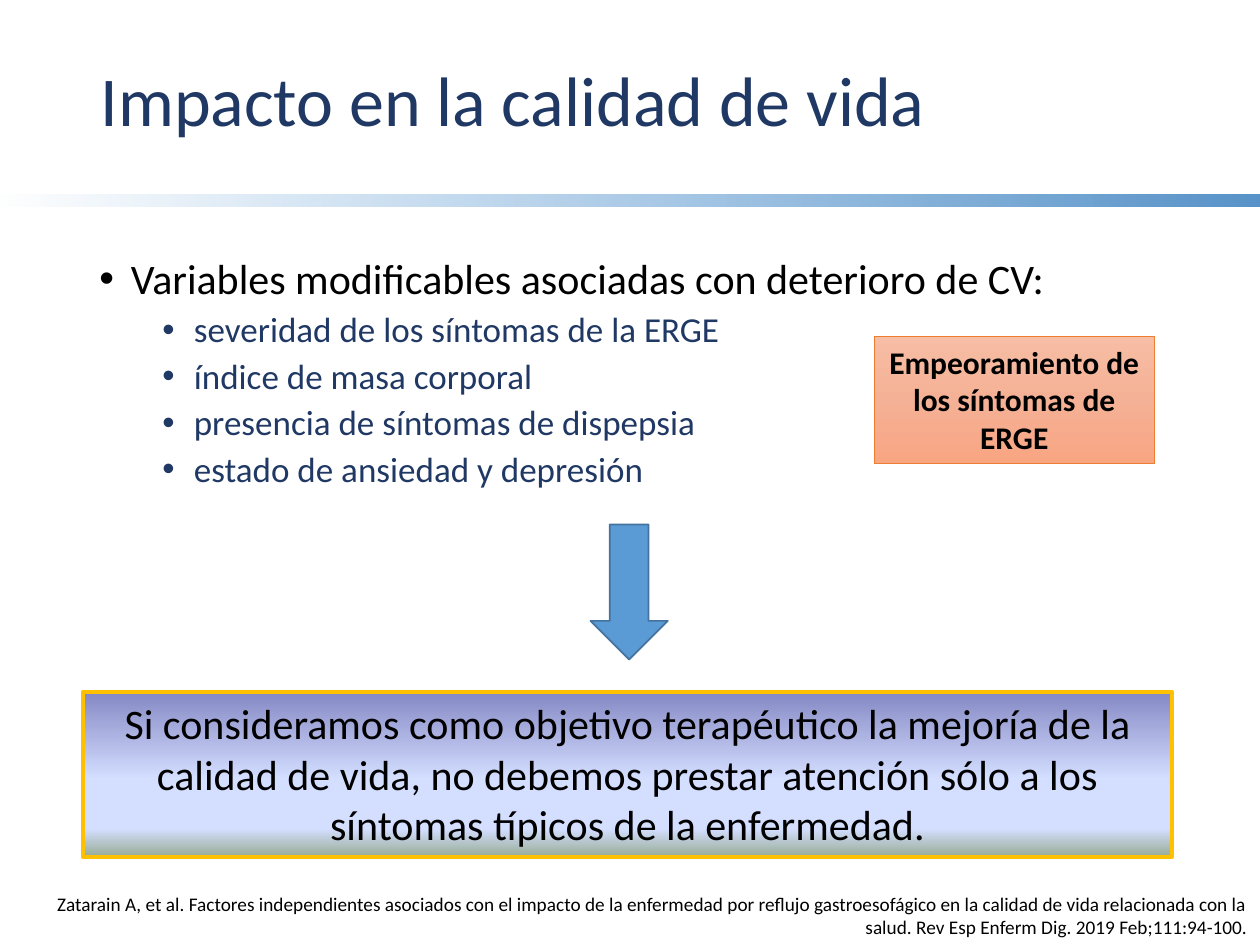
import pptx
import pptx.util
import pptx.dml.color
import pptx.enum.shapes
import pptx.enum.text
import pptx.oxml.ns
from lxml import etree

Pt = pptx.util.Pt
qn = pptx.oxml.ns.qn
KIND = pptx.enum.shapes.MSO_SHAPE
ALIGN = pptx.enum.text.PP_ALIGN
ANCHOR = pptx.enum.text.MSO_ANCHOR

HUES = {
    "navy": "203864", "black": "000000", "blue": "5B9BD5", "steel": "5591C8",
    "edge": "43739E", "orange": "ED7D31", "gold": "FFC000",
    "peach": "F7BDA5", "salmon": "F5B196", "coral": "F8A582",
    "violet": "8488C4", "pale": "D4DEFF", "sage": "96AB94",
}

FACTORS = [
    "severidad de los síntomas de la ERGE",
    "índice de masa corporal",
    "presencia de síntomas de dispepsia",
    "estado de ansiedad y depresión",
]


def rgb(name):
    return pptx.dml.color.RGBColor.from_string(HUES[name])


def style(par, size, hue="black", bold=False, **form):
    """Set the font and the paragraph format."""
    for key, val in {"name": "Calibri", "size": Pt(size), "bold": bold}.items():
        setattr(par.font, key, val)
    par.font.color.rgb = rgb(hue)
    for key, val in form.items():
        setattr(par, key, val)


def add_bullet(par, left, hang):
    """Give the paragraph a round bullet with a hanging indent."""
    props = par._p.get_or_add_pPr()
    props.set("marL", str(Pt(left)))
    props.set("indent", str(-Pt(hang)))
    font = etree.SubElement(props, qn("a:buFont"))
    font.set("typeface", "Arial")
    etree.SubElement(props, qn("a:buChar")).set("char", "•")


def add_box(slide, box, anchor=ANCHOR.TOP):
    """Add a wrapping text box and return its frame."""
    frame = slide.shapes.add_textbox(*map(Pt, box)).text_frame
    frame.word_wrap = True
    frame.vertical_anchor = anchor
    return frame


def add_form(slide, kind, box, line=None, width=1):
    """Add a preset shape without shadow."""
    shape = slide.shapes.add_shape(kind, *map(Pt, box))
    shape.shadow.inherit = False
    if line:
        shape.line.color.rgb = rgb(line)
        shape.line.width = Pt(width)
    else:
        shape.line.fill.background()
    return shape


def blend(shape, stops, angle=0):
    """Fill with (percent, colour, opacity) stops, angle clockwise."""
    shape.fill.gradient()
    shape.fill.gradient_angle = -angle % 360
    marks = shape._element.spPr.find(qn("a:gradFill")).find(qn("a:gsLst"))
    for old in list(marks):
        marks.remove(old)
    for place, hue, alpha in stops:
        stop = etree.SubElement(marks, qn("a:gs"))
        stop.set("pos", str(place * 1000))
        tone = etree.SubElement(stop, qn("a:srgbClr"))
        tone.set("val", HUES[hue])
        if alpha < 100:
            etree.SubElement(tone, qn("a:alpha")).set("val", str(alpha * 1000))


def add_panel(slide, box, text, size, line, width, stops, bold=False):
    """Add a shaded rectangle with centred text."""
    shape = add_form(slide, KIND.RECTANGLE, box, line, width)
    blend(shape, stops, 90)
    frame = shape.text_frame
    frame.word_wrap = True
    frame.vertical_anchor = ANCHOR.TOP
    frame.text = text
    style(frame.paragraphs[0], size, bold=bold, alignment=ALIGN.CENTER)


def add_list(slide, box, head, items):
    """Add the heading bullet and its second-level items."""
    frame = add_box(slide, box)
    par = frame.paragraphs[0]
    par.text = head
    add_bullet(par, 18, 18)
    style(par, 24, line_spacing=0.9)
    for item in items:
        par = frame.add_paragraph()
        par.text = item
        par.level = 1
        add_bullet(par, 54, 18)
        style(par, 20, "navy", line_spacing=0.9, space_before=Pt(5))


def main():
    deck = pptx.Presentation()
    deck.slide_width, deck.slide_height = Pt(720), Pt(540)
    slide = deck.slides.add_slide(deck.slide_layouts[6])

    # Band and title
    band = add_form(slide, KIND.RECTANGLE, (-4.3, 111.3, 734.4, 6.8))
    blend(band, [(0, "blue", 0), (100, "steel", 100)])
    frame = add_box(slide, (25.2, 7.2, 535.7, 104.4), ANCHOR.MIDDLE)
    frame.text = "Impacto en la calidad de vida"
    style(frame.paragraphs[0], 40, "navy", alignment=ALIGN.CENTER,
          line_spacing=0.9)

    # Modifiable factors
    add_list(slide, (49.7, 144, 620.6, 211.7),
             "Variables modificables asociadas con deterioro de CV:", FACTORS)

    # Symptom note
    add_panel(slide, (499.7, 192.2, 159.8, 72.7),
              "Empeoramiento de los síntomas de ERGE", 18, "orange", 0.5,
              [(0, "peach", 100), (50, "salmon", 100), (100, "coral", 100)],
              bold=True)

    # Conclusion
    add_panel(slide, (47.5, 395.3, 622.1, 94.3),
              "Si consideramos como objetivo terapéutico la mejoría de la "
              "calidad de vida, no debemos prestar atención sólo a los "
              "síntomas típicos de la enfermedad.", 24, "gold", 2.5,
              [(0, "violet", 100), (53, "pale", 100), (83, "pale", 100),
               (100, "sage", 100)])
    arrow = add_form(slide, KIND.DOWN_ARROW, (337.4, 299.7, 44.2, 77.2), "edge")
    arrow.fill.solid()
    arrow.fill.fore_color.rgb = rgb("blue")

    # Citation
    frame = add_box(slide, (0, 506.2, 720, 33.8))
    frame.text = (
        "Zatarain A, et al. Factores independientes asociados con el impacto "
        "de la enfermedad por reflujo gastroesofágico en la calidad de vida "
        "relacionada con la salud. Rev Esp Enferm Dig. 2019 Feb;111:94-100.")
    style(frame.paragraphs[0], 11, alignment=ALIGN.RIGHT)

    deck.save("out.pptx")


if __name__ == "__main__":
    main()
